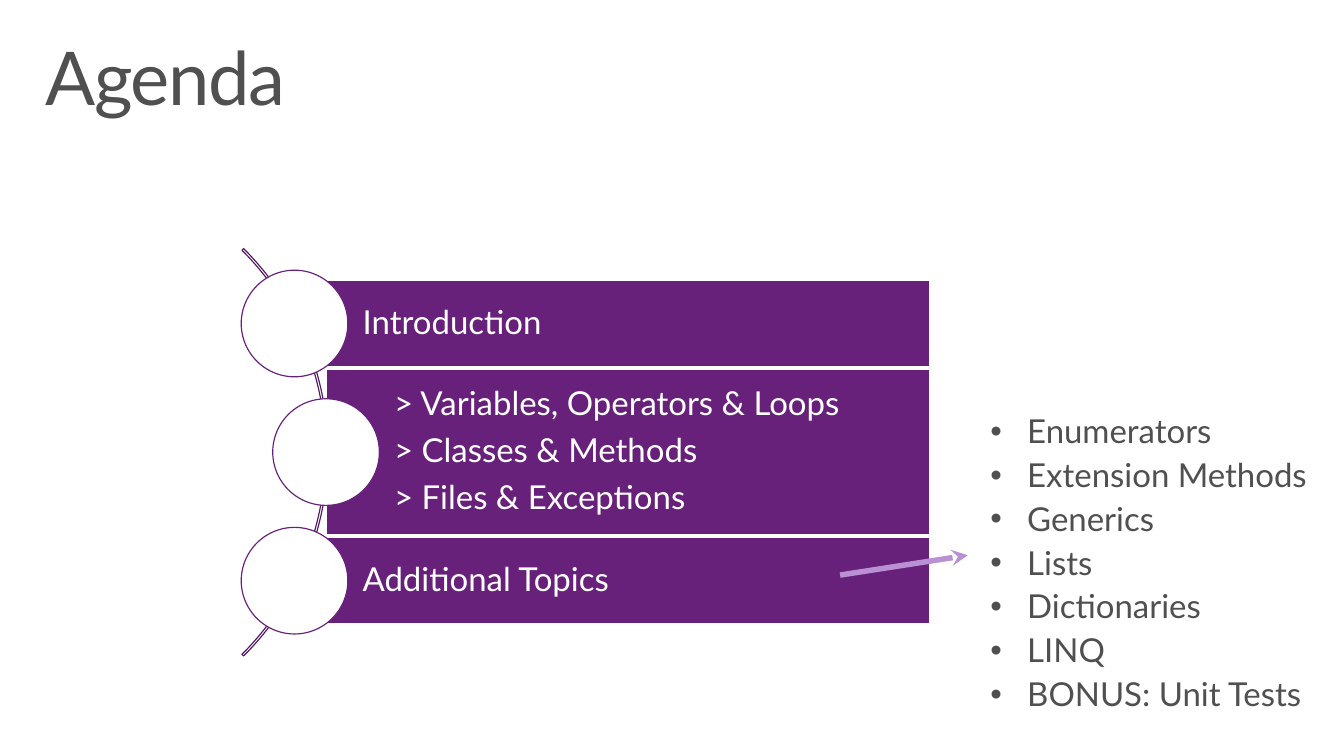
from lxml.etree import SubElement as Sub
from pptx import Presentation
from pptx.dml.color import RGBColor
from pptx.enum.shapes import MSO_CONNECTOR as Link, MSO_SHAPE as Kind
from pptx.enum.text import MSO_ANCHOR as Anchor, MSO_AUTO_SIZE as Fit, PP_ALIGN as Align
from pptx.oxml.ns import qn
from pptx.util import Cm, Pt

GREY = RGBColor(0x50, 0x50, 0x50)
WHITE = RGBColor(0xFF, 0xFF, 0xFF)
PURPLE = RGBColor(0x68, 0x21, 0x7A)
PLUM = RGBColor(0x53, 0x1A, 0x62)
LILAC = RGBColor(0xB9, 0x90, 0xD3)

# Each bar: left edge, height, lines
BARS = [
    (7.57, 2.21, ["Introduction"]),
    (8.38, 4.24, ["> Variables, Operators & Loops", "> Classes & Methods",
                  "> Files & Exceptions"]),
    (7.57, 2.21, ["Additional Topics"]),
]
TOPICS = ["Enumerators", "Extension Methods", "Generics", "Lists",
          "Dictionaries", "LINQ", "BONUS: Unit Tests"]
TOP, RIGHT, GAP = 7.21, 23.88, 0.08
DISC = 2.74


class Board:
    font = "Lato"
    thin = Pt(0.85)

    def __init__(self, slide):
        self.shapes = slide.shapes

    def add_lines(self, frame, lines, color, size=24, after=0, pads=(0, 0, 0, 0),
                  bullet=False, track=0):
        (frame.margin_left, frame.margin_top,
         frame.margin_right, frame.margin_bottom) = map(Cm, pads)
        for i, line in enumerate(lines):
            para = frame.add_paragraph() if i else frame.paragraphs[0]
            para.alignment = Align.LEFT
            para.line_spacing = 0.9
            para.space_after = Pt(after)
            if bullet:
                props = para._p.get_or_add_pPr()
                props.set("marL", str(Cm(0.95)))
                props.set("indent", str(-Cm(0.95)))
                Sub(props, qn("a:buFont"), typeface="Arial")
                Sub(props, qn("a:buChar"), char="•")
            run = para.add_run()
            run.text = line
            run.font.name = self.font
            run.font.size = Pt(size)
            run.font.color.rgb = color
            if track:
                run._r.get_or_add_rPr().set("spc", str(track))

    def text(self, x, y, w, h, lines, wrap=True, **style):
        frame = self.shapes.add_textbox(Cm(x), Cm(y), Cm(w), Cm(h)).text_frame
        frame.word_wrap = wrap
        frame.auto_size = Fit.NONE if wrap else Fit.SHAPE_TO_FIT_TEXT
        self.add_lines(frame, lines, GREY, **style)

    def shape(self, kind, x, y, w, h, fill, line):
        item = self.shapes.add_shape(kind, Cm(x), Cm(y), Cm(w), Cm(h))
        item.shadow.inherit = False
        if fill is None:
            item.fill.background()
        else:
            item.fill.solid()
            item.fill.fore_color.rgb = fill
        item.line.color.rgb = line
        item.line.width = self.thin
        return item

    def arc(self, x, y, size):
        item = self.shape(Kind.BLOCK_ARC, x, y, size, size, None, PLUM)
        for i, value in enumerate((189, 27, 0.004)):
            item.adjustments[i] = value

    def bar(self, x, y, w, h, lines):
        frame = self.shape(Kind.RECTANGLE, x, y, w, h, PURPLE, WHITE).text_frame
        frame.word_wrap = True
        frame.vertical_anchor = Anchor.MIDDLE
        self.add_lines(frame, lines, WHITE, after=8.4, pads=(1.75, 0.18, 0.18, 0.18))

    def disc(self, x, y):
        self.shape(Kind.OVAL, x - DISC / 2, y - DISC / 2, DISC, DISC, WHITE, PURPLE)

    def arrow(self, x1, y1, x2, y2):
        item = self.shapes.add_connector(Link.STRAIGHT, Cm(x1), Cm(y1), Cm(x2), Cm(y2))
        item.line.color.rgb = LILAC
        item.line.width = Pt(4)
        props = item._element.spPr
        Sub(props.find(qn("a:ln")), qn("a:tailEnd"), type="stealth")
        Sub(props, qn("a:effectLst"))


def main():
    deck = Presentation()
    deck.slide_width, deck.slide_height = Cm(34.54), Cm(19.43)
    board = Board(deck.slides.add_slide(deck.slide_layouts[6]))

    # Title
    board.text(0.76, 0.81, 33.02, 2.54, ["Agenda"], size=54,
               pads=(0.41, 0.25, 0.41, 0.25), track=-100)

    # Curve with bars and discs
    board.arc(-6.38, 4.22, 14.81)
    y = TOP
    for x, high, lines in BARS:
        board.bar(x, y, RIGHT - x, high, lines)
        board.disc(x, y + high / 2)
        y += high + GAP

    # Topic list and its arrow
    board.text(24.94, 10.26, 9.17, 8.56, TOPICS, wrap=False, after=6,
               pads=(0.51, 0.41, 0.51, 0.41), bullet=True)
    board.arrow(21.59, 14.78, 24.87, 14.27)

    deck.save("out.pptx")


if __name__ == "__main__":
    main()
